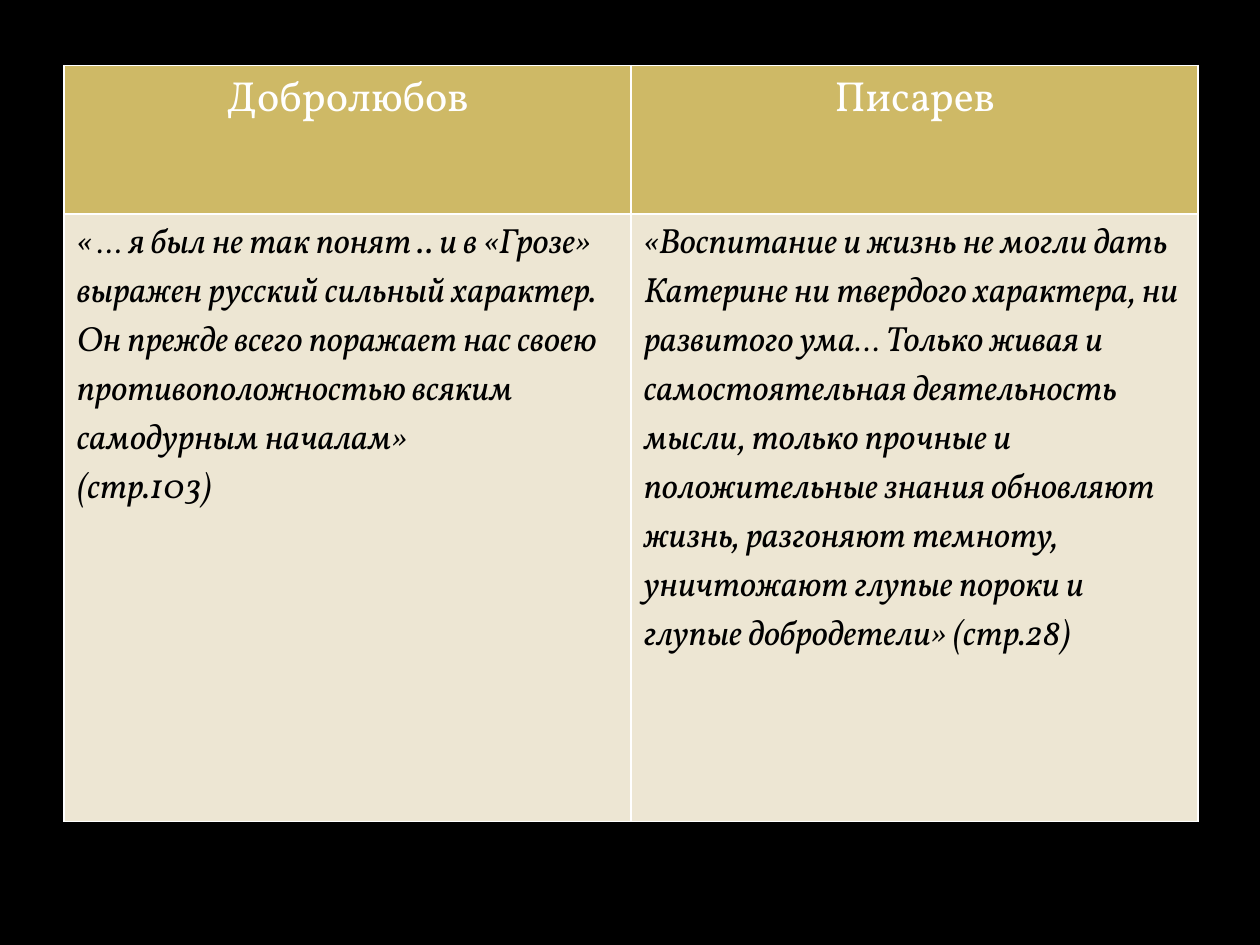
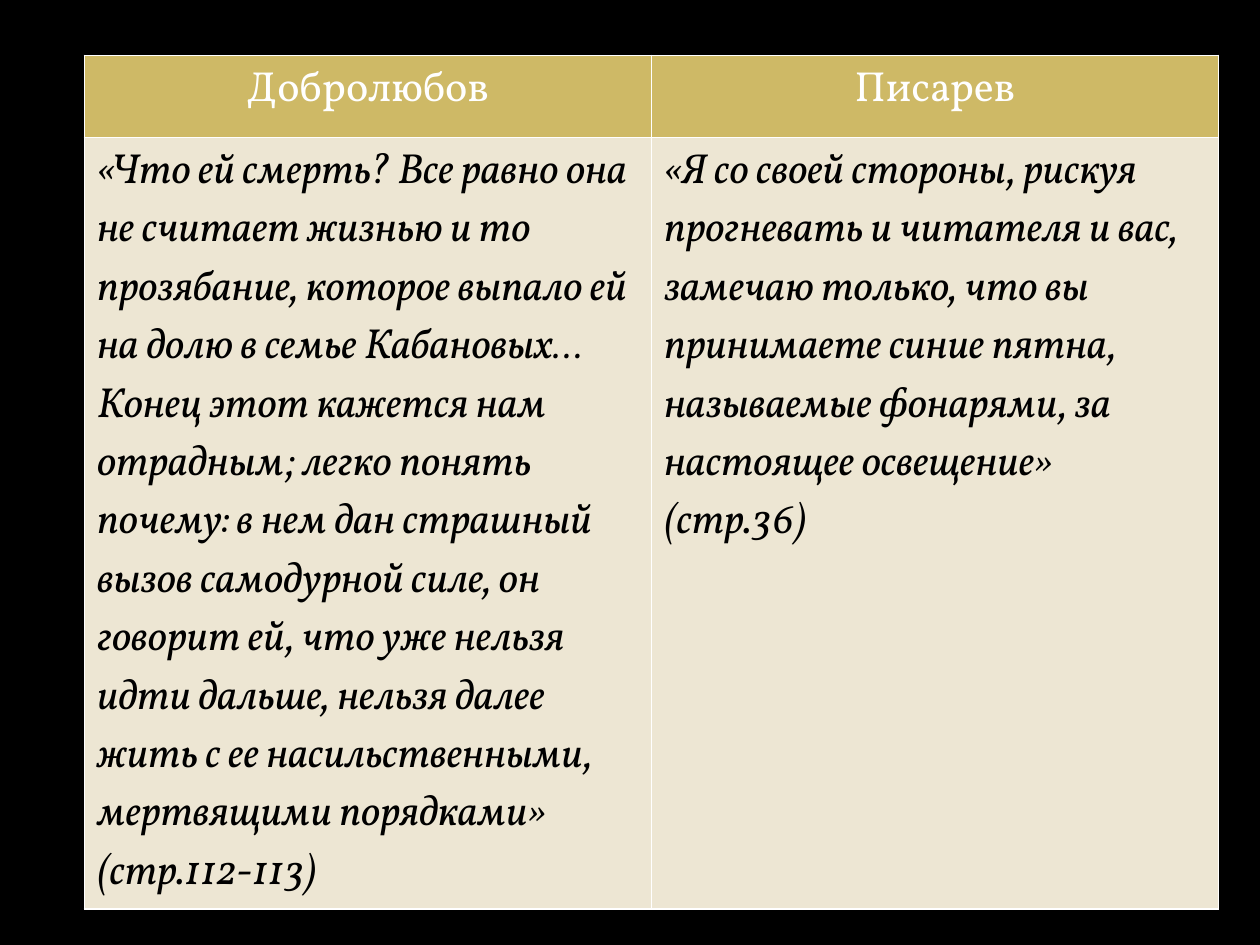
"""Build two slides that compare what Dobrolyubov and Pisarev wrote about Katerina."""
from lxml import etree
from pptx import Presentation
from pptx.dml.color import RGBColor
from pptx.enum import text
from pptx.oxml import ns
from pptx.util import Inches, Pt

COLORS = {"background": "000000", "header": "CEB966", "body": "EDE6D3",
          "header_text": "FFFFFF", "body_text": "000000", "border": "FFFFFF"}
FONT = "Vollkorn"
CRITICS = ["Добролюбов", "Писарев"]
COLUMN_WIDTH = 4.5
HEADER_SIZE = 24

COMPARISONS = [
    {"left": 0.51, "top": 0.52, "rows": [1.18, 4.82], "size": 20, "quotes": [
        "« … я был не так понят .. и в «Грозе» выражен русский сильный характер.  "
        "Он прежде всего поражает нас своею противоположностью всяким "
        "самодурным началам»\n(стр.103)",
        "«Воспитание и жизнь не могли дать Катерине ни твердого характера, ни "
        "развитого ума… Только живая и самостоятельная деятельность мысли, только "
        "прочные и положительные знания обновляют жизнь, разгоняют темноту, "
        "уничтожают глупые пороки и глупые добродетели» (стр.28)"]},
    {"left": 0.67, "top": 0.44, "rows": [0.65, 5.91], "size": 24, "quotes": [
        "«Что ей смерть? Все равно она не считает жизнью и то прозябание, которое "
        "выпало ей на долю в семье Кабановых… Конец этот кажется нам отрадным; "
        "легко понять почему: в нем дан страшный вызов самодурной силе, он говорит "
        "ей, что уже нельзя идти дальше, нельзя далее жить с ее насильственными, "
        "мертвящими порядками»\n(стр.112-113)",
        "«Я со своей стороны, рискуя прогневать и читателя и вас, замечаю только, "
        "что вы принимаете синие пятна, называемые фонарями, за настоящее "
        "освещение»\n(стр.36)"]},
]


def add_borders(cell):
    properties = cell._tc.get_or_add_tcPr()
    for side in ("a:lnL", "a:lnR", "a:lnT", "a:lnB"):
        line = etree.SubElement(properties, ns.qn(side), w=str(Pt(1)))
        fill = etree.SubElement(line, ns.qn("a:solidFill"))
        etree.SubElement(fill, ns.qn("a:srgbClr"), val=COLORS["border"])


def fill_cell(cell, words, role, size):
    add_borders(cell)
    cell.fill.solid()
    cell.fill.fore_color.rgb = RGBColor.from_string(COLORS[role])
    cell.text = words
    for paragraph in cell.text_frame.paragraphs:
        if role == "header":
            paragraph.alignment = text.PP_ALIGN.CENTER
        font = paragraph.font
        font.name = FONT
        font.size = Pt(size)
        font.bold = False
        font.italic = role == "body"
        font.color.rgb = RGBColor.from_string(COLORS[f"{role}_text"])


presentation = Presentation()
presentation.slide_width = Inches(10)
presentation.slide_height = Inches(7.5)
blank_layout = presentation.slide_layouts[6]

for comparison in COMPARISONS:
    slide = presentation.slides.add_slide(blank_layout)
    background = slide.background.fill
    background.solid()
    background.fore_color.rgb = RGBColor.from_string(COLORS["background"])

    heights = comparison["rows"]
    table = slide.shapes.add_table(
        len(heights), len(CRITICS), Inches(comparison["left"]), Inches(comparison["top"]),
        Inches(COLUMN_WIDTH * len(CRITICS)), Inches(sum(heights))).table
    table.first_row = False
    table.horz_banding = False
    for row, height in zip(table.rows, heights):
        row.height = Inches(height)
    for index, (critic, quote) in enumerate(zip(CRITICS, comparison["quotes"])):
        table.columns[index].width = Inches(COLUMN_WIDTH)
        fill_cell(table.cell(0, index), critic, "header", HEADER_SIZE)
        fill_cell(table.cell(1, index), quote, "body", comparison["size"])

presentation.save("out.pptx")
